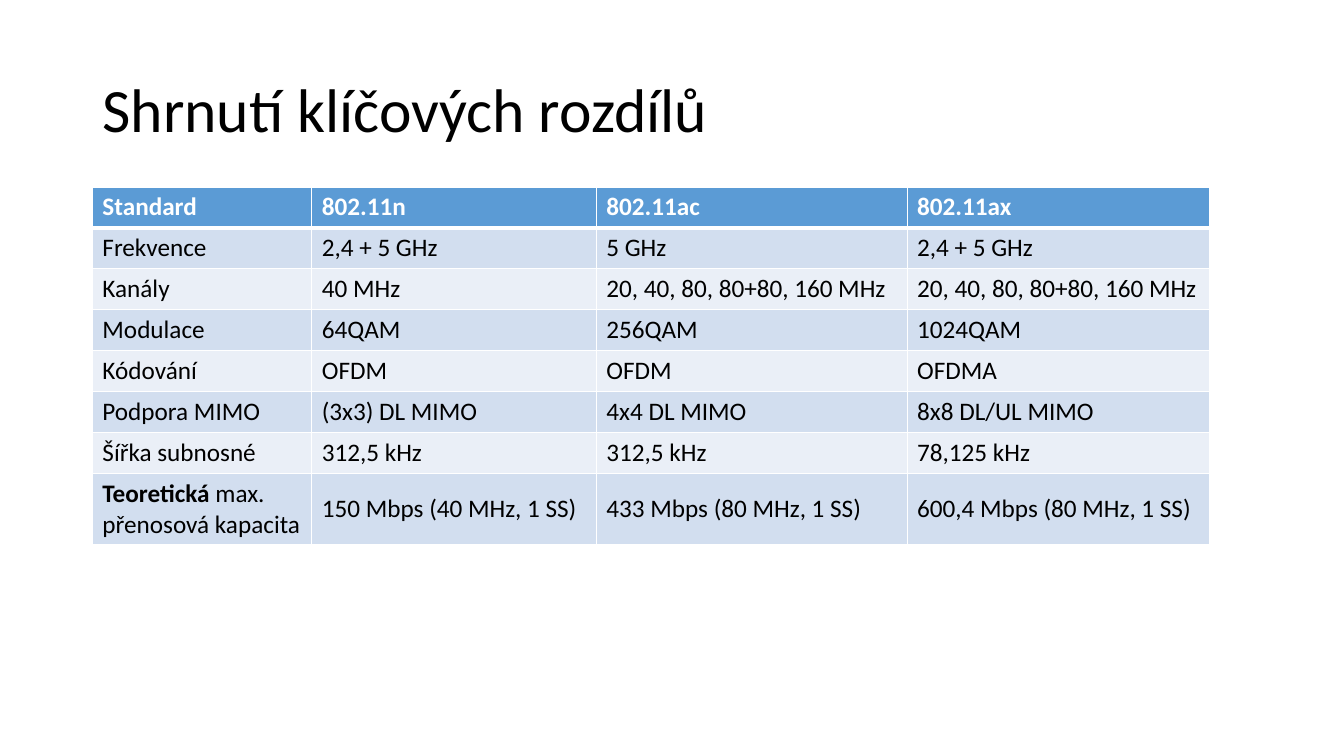
"""Build the slide that sums up the key differences between wireless network standards."""
import dataclasses
import typing

import lxml.etree
import pptx
import pptx.dml.color
import pptx.enum.text
import pptx.oxml.ns
import pptx.slide
import pptx.table
import pptx.text.text
import pptx.util

EMU_PER_PX = 9525
FONT = "Calibri"
COLORS = {
    "text": "000000",
    "header_text": "FFFFFF",
    "border": "FFFFFF",
    "header": "5B9BD5",
    "odd_row": "D2DEEF",
    "even_row": "EAEFF7",
}
TITLE_BOX = {"left": 88, "top": 38, "width": 1104, "height": 139}
TABLE_LEFT, TABLE_TOP = 88, 178
COLUMN_WIDTHS = (209, 271, 296, 288)
TOP = pptx.enum.text.MSO_ANCHOR.TOP
MIDDLE = pptx.enum.text.MSO_ANCHOR.MIDDLE


@dataclasses.dataclass(frozen=True)
class ComparisonRow:
    label: str
    values: tuple[str, str, str]
    bold_lead: str = ""
    height: int = 39
    value_anchor: pptx.enum.text.MSO_ANCHOR = TOP


ROWS = (
    ComparisonRow("Standard", ("802.11n", "802.11ac", "802.11ax")),
    ComparisonRow("Frekvence", ("2,4 + 5 GHz", "5 GHz", "2,4 + 5 GHz")),
    ComparisonRow("Kanály", ("40 MHz", "20, 40, 80, 80+80, 160 MHz", "20, 40, 80, 80+80, 160 MHz")),
    ComparisonRow("Modulace", ("64QAM", "256QAM", "1024QAM")),
    ComparisonRow("Kódování", ("OFDM", "OFDM", "OFDMA")),
    ComparisonRow("Podpora MIMO", ("(3x3) DL MIMO", "4x4 DL MIMO", "8x8 DL/UL MIMO")),
    ComparisonRow("Šířka subnosné", ("312,5 kHz", "312,5 kHz", "78,125 kHz")),
    ComparisonRow(
        "max. přenosová kapacita",
        ("150 Mbps (40 MHz, 1 SS)", "433 Mbps (80 MHz, 1 SS)", "600,4 Mbps (80 MHz, 1 SS)"),
        bold_lead="Teoretická ",
        height=68,
        value_anchor=MIDDLE,
    ),
)


def px(length: int) -> pptx.util.Emu:
    return pptx.util.Emu(length * EMU_PER_PX)


def rgb(name: str) -> pptx.dml.color.RGBColor:
    return pptx.dml.color.RGBColor.from_string(COLORS[name])


def set_values(target: typing.Any, values: dict[str, typing.Any]) -> None:
    for name, value in values.items():
        setattr(target, name, value)


def add_run(
    paragraph: pptx.text.text._Paragraph, text: str, size: int, color: str, bold: bool = False
) -> None:
    run = paragraph.add_run()
    run.text = text
    set_values(run.font, {"name": FONT, "size": pptx.util.Pt(size), "bold": bold})
    run.font.color.rgb = rgb(color)


def set_borders(cell: pptx.table._Cell, widths: dict[str, int]) -> None:
    properties = cell._tc.get_or_add_tcPr()
    for position, (side, width) in enumerate(widths.items()):
        line = lxml.etree.Element(
            pptx.oxml.ns.qn(f"a:ln{side}"), {"w": str(pptx.util.Pt(width))}
        )
        fill = lxml.etree.SubElement(line, pptx.oxml.ns.qn("a:solidFill"))
        lxml.etree.SubElement(fill, pptx.oxml.ns.qn("a:srgbClr"), {"val": COLORS["border"]})
        properties.insert(position, line)


def add_title(slide: pptx.slide.Slide, text: str) -> None:
    title = slide.shapes.title
    set_values(title, {name: px(length) for name, length in TITLE_BOX.items()})
    set_values(title.text_frame, {
        "word_wrap": True,
        "auto_size": pptx.enum.text.MSO_AUTO_SIZE.NONE,
        "vertical_anchor": MIDDLE,
    })
    paragraph = title.text_frame.paragraphs[0]
    set_values(paragraph, {"alignment": pptx.enum.text.PP_ALIGN.LEFT, "line_spacing": 0.9})
    add_run(paragraph, text, 44, "text")


def fill_row(table: pptx.table.Table, index: int, row: ComparisonRow) -> None:
    is_header = index == 0
    background = "header" if is_header else "odd_row" if index % 2 else "even_row"
    text_color = "header_text" if is_header else "text"
    borders = {"L": 1, "R": 1, "T": 3 if index == 1 else 1, "B": 3 if is_header else 1}
    table.rows[index].height = px(row.height)
    for column, text in enumerate((row.label, *row.values)):
        cell = table.cell(index, column)
        cell.vertical_anchor = row.value_anchor if column else TOP
        cell.fill.solid()
        cell.fill.fore_color.rgb = rgb(background)
        set_borders(cell, borders)
        paragraph = cell.text_frame.paragraphs[0]
        if row.bold_lead and column == 0:
            add_run(paragraph, row.bold_lead, 18, text_color, bold=True)
        add_run(paragraph, text, 18, text_color, bold=is_header)


def add_comparison(slide: pptx.slide.Slide) -> None:
    table = slide.shapes.add_table(
        len(ROWS), len(COLUMN_WIDTHS), px(TABLE_LEFT), px(TABLE_TOP),
        px(sum(COLUMN_WIDTHS)), px(sum(row.height for row in ROWS)),
    ).table
    for column, width in zip(table.columns, COLUMN_WIDTHS):
        column.width = px(width)
    for index, row in enumerate(ROWS):
        fill_row(table, index, row)


def main() -> None:
    presentation = pptx.Presentation()
    set_values(presentation, {"slide_width": px(1280), "slide_height": px(720)})
    slide = presentation.slides.add_slide(presentation.slide_layouts.get_by_name("Title Only"))
    add_title(slide, "Shrnutí klíčových rozdílů")
    add_comparison(slide)
    presentation.save("out.pptx")


if __name__ == "__main__":
    main()
